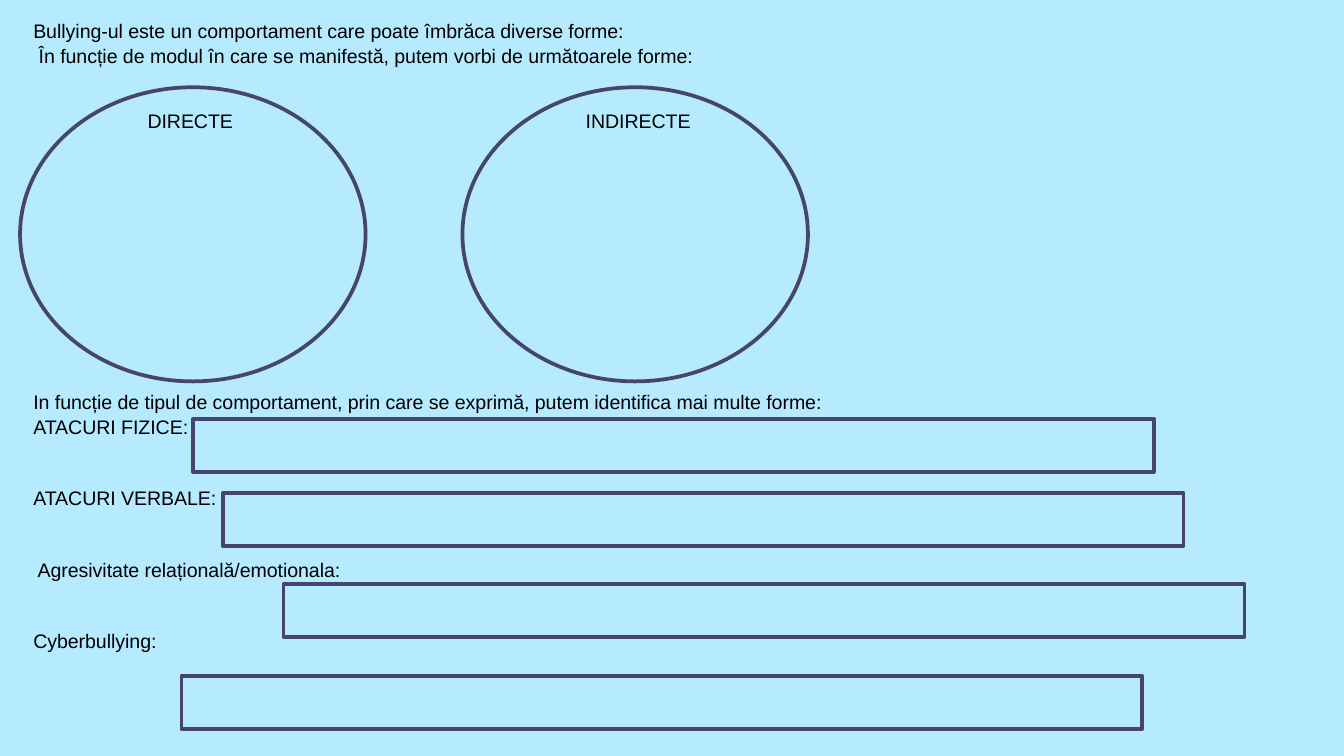
"""Build a slide on the forms that bullying can take."""
import pptx
import pptx.dml.color
import pptx.enum.shapes
import pptx.util

Cm = pptx.util.Cm
Pt = pptx.util.Pt
SHAPES = pptx.enum.shapes.MSO_SHAPE

COLOURS = {"sky": "B6EAFF", "outline": "454570", "text": "000000"}
FONT = {"name": "Arial", "size": Pt(10.5)}
MARGIN = 0.38
GROUP_GAP = 24.8

INTRO = [
    ("Bullying-ul este un comportament care poate îmbrăca diverse forme:", 0),
    (" În funcție de modul în care se manifestă, putem vorbi de următoarele forme:", 0),
]
BEHAVIOURS = [
    ("In funcție de tipul de comportament, prin care se exprimă, putem identifica mai multe forme:", 0),
    ("ATACURI FIZICE:", 0),
    ("ATACURI VERBALE:", GROUP_GAP),
    (" Agresivitate relațională/emotionala:", GROUP_GAP),
    ("Cyberbullying:", GROUP_GAP),
]
MODES = [("DIRECTE", MARGIN, 2.54), ("INDIRECTE", 8.74, 10.82)]
ANSWER_CORNERS = [(3.65, 7.92), (4.21, 9.32), (5.36, 11.04), (3.43, 12.78)]
ELLIPSE_SIZE = (6.53, 5.56)
ANSWER_SIZE = (18.16, 1)


def colour(name):
    return pptx.dml.color.RGBColor.from_string(COLOURS[name])


def add_text(page, lines, left, top, width, height):
    box = page.shapes.add_textbox(Cm(left), Cm(top), Cm(width), Cm(height))
    frame = box.text_frame
    frame.word_wrap = True
    for index, (words, gap) in enumerate(lines):
        para = frame.paragraphs[0] if index == 0 else frame.add_paragraph()
        for key, value in {"line_spacing": 1.07, "space_before": Pt(gap)}.items():
            setattr(para, key, value)
        span = para.add_run()
        span.text = words
        for key, value in FONT.items():
            setattr(span.font, key, value)
        span.font.color.rgb = colour("text")


def add_outline(page, kind, left, top, size):
    shape = page.shapes.add_shape(kind, Cm(left), Cm(top), *map(Cm, size))
    shape.shadow.inherit = False
    shape.fill.solid()
    shape.fill.fore_color.rgb = colour("sky")
    shape.line.color.rgb = colour("outline")
    shape.line.width = Pt(2)


def main():
    deck = pptx.Presentation()
    deck.slide_width, deck.slide_height = Cm(25.4), Cm(14.29)
    page = deck.slides.add_slide(deck.slide_layouts[6])
    page.background.fill.solid()
    page.background.fill.fore_color.rgb = colour("sky")

    add_text(page, INTRO, MARGIN, 0.2, 20.88, 1.14)
    for label, ellipse_left, label_left in MODES:
        add_outline(page, SHAPES.OVAL, ellipse_left, 1.65, ELLIPSE_SIZE)
        add_text(page, [(label, 0)], label_left, 1.9, 3.05, 0.71)
    add_text(page, BEHAVIOURS, MARGIN, 7.21, 20.42, 5.18)
    for left, top in ANSWER_CORNERS:
        add_outline(page, SHAPES.RECTANGLE, left, top, ANSWER_SIZE)

    deck.save("out.pptx")


if __name__ == "__main__":
    main()
